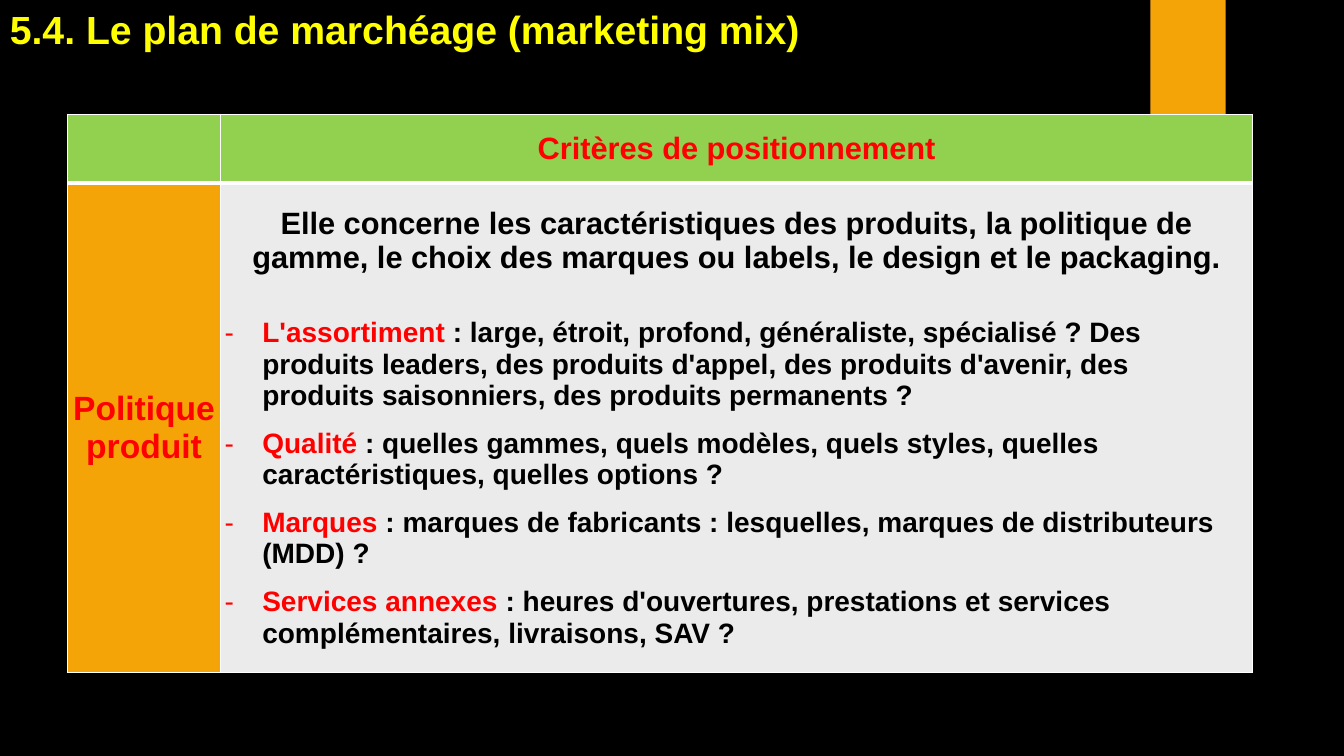
from dataclasses import dataclass

from lxml.etree import SubElement
from pptx import Presentation
from pptx.dml.color import RGBColor
from pptx.enum.shapes import MSO_SHAPE
from pptx.enum.text import MSO_ANCHOR, MSO_AUTO_SIZE, PP_ALIGN
from pptx.oxml import parse_xml
from pptx.oxml.ns import nsdecls, qn
from pptx.util import Cm, Pt


@dataclass(frozen=True)
class Theme:
    font: str = "Arial"
    background: str = "000000"
    accent: str = "F5A408"
    header: str = "92D050"
    body: str = "EBEBEB"
    border: str = "FFFFFF"
    title: str = "FFFF00"
    emphasis: str = "FF0000"
    text: str = "000000"
    title_size: int = 28
    policy_size: int = 24
    lead_size: int = 22
    criterion_size: int = 20


THEME = Theme()
TITLE = "5.4. Le plan de marchéage (marketing mix)"
HEADING = "Critères de positionnement"
POLICY = ("Politique", "produit")
LEAD = ("Elle concerne les caractéristiques des produits, la politique de gamme, "
        "le choix des marques ou labels, le design et le packaging.")
CRITERIA = (
    ("L'assortiment", " : large, étroit, profond, généraliste, spécialisé ? "
     "Des produits leaders, des produits d'appel, des produits d'avenir, "
     "des produits saisonniers, des produits permanents ?"),
    ("Qualité", " : quelles gammes, quels modèles, quels styles, "
     "quelles caractéristiques, quelles options ?"),
    ("Marques", " : marques de fabricants : lesquelles, "
     "marques de distributeurs (MDD) ?"),
    ("Services annexes ", ": heures d'ouvertures, prestations et services "
     "complémentaires, livraisons, SAV ?"),
)


def style_run(run, size, color):
    run.font.name = THEME.font
    run.font.size = Pt(size)
    run.font.bold = True
    run.font.color.rgb = RGBColor.from_string(color)


def write_line(paragraph, text, size, color, align=PP_ALIGN.CENTER):
    paragraph.text = text
    paragraph.alignment = align
    style_run(paragraph.runs[0], size, color)


def write_criterion(paragraph, label, detail):
    properties = paragraph._p.get_or_add_pPr()
    properties.set("marL", str(Cm(0.95)))
    properties.set("indent", str(-Cm(0.95)))
    SubElement(properties, qn("a:buFont")).set("typeface", THEME.font)
    SubElement(properties, qn("a:buChar")).set("char", "-")
    paragraph.alignment = PP_ALIGN.LEFT
    paragraph.space_before = Pt(12)
    for text, color in ((label, THEME.emphasis), (detail, THEME.text)):
        run = paragraph.add_run()
        run.text = text
        style_run(run, THEME.criterion_size, color)


def format_cell(cell, color, bottom_width):
    cell.margin_left = cell.margin_right = Cm(0.1)
    cell.margin_top = cell.margin_bottom = 0
    cell.vertical_anchor = MSO_ANCHOR.MIDDLE
    cell.fill.solid()
    cell.fill.fore_color.rgb = RGBColor.from_string(color)
    widths = {"L": 1, "R": 1, "T": 1, "B": bottom_width}
    for position, (side, width) in enumerate(widths.items()):
        cell._tc.get_or_add_tcPr().insert(position, parse_xml(
            f'<a:ln{side} {nsdecls("a")} w="{Pt(width)}"><a:solidFill>'
            f'<a:srgbClr val="{THEME.border}"/></a:solidFill></a:ln{side}>'))


def add_accent_bar(slide, left, top, width, height):
    bar = slide.shapes.add_shape(MSO_SHAPE.RECTANGLE, left, top, width, height)
    bar.shadow.inherit = False
    bar.fill.solid()
    bar.fill.fore_color.rgb = RGBColor.from_string(THEME.accent)
    bar.line.fill.background()


def add_title(slide, left, top, width, height):
    frame = slide.shapes.add_textbox(left, top, width, height).text_frame
    frame.word_wrap = True
    frame.auto_size = MSO_AUTO_SIZE.SHAPE_TO_FIT_TEXT
    heading = frame.paragraphs[0]
    write_line(heading, TITLE, THEME.title_size, THEME.title, PP_ALIGN.LEFT)
    heading.space_after = Pt(3)


def add_policy_table(slide, left, top, width, height):
    table = slide.shapes.add_table(2, 2, left, top, width, height).table
    table.horz_banding = False
    policy_width, header_height = Cm(3.86), Cm(1.73)
    table.columns[0].width = policy_width
    table.columns[1].width = width - policy_width
    table.rows[0].height = header_height
    table.rows[1].height = height - header_height

    corner, header, policy, criteria = table.iter_cells()
    format_cell(corner, THEME.header, 3)
    format_cell(header, THEME.header, 3)
    format_cell(policy, THEME.accent, 1)
    format_cell(criteria, THEME.body, 1)

    write_line(header.text_frame.paragraphs[0], HEADING,
               THEME.lead_size, THEME.emphasis)
    policy.text_frame.text = "\n".join(POLICY)
    for paragraph, word in zip(policy.text_frame.paragraphs, POLICY):
        write_line(paragraph, word, THEME.policy_size, THEME.emphasis)
    lead = criteria.text_frame.paragraphs[0]
    write_line(lead, LEAD, THEME.lead_size, THEME.text)
    lead.space_after = Pt(18)
    for label, detail in CRITERIA:
        write_criterion(criteria.text_frame.add_paragraph(), label, detail)


def main():
    presentation = Presentation()
    presentation.slide_width = Cm(33.87)
    presentation.slide_height = Cm(19.05)
    slide = presentation.slides.add_slide(presentation.slide_layouts[6])
    slide.background.fill.solid()
    slide.background.fill.fore_color.rgb = RGBColor.from_string(THEME.background)
    add_accent_bar(slide, Cm(28.99), 0, Cm(1.9), Cm(3.18))
    add_policy_table(slide, Cm(1.7), Cm(2.88), Cm(29.87), Cm(14.07))
    add_title(slide, 0, 0, Cm(32.2), Cm(1.45))
    presentation.save("out.pptx")


if __name__ == "__main__":
    main()
